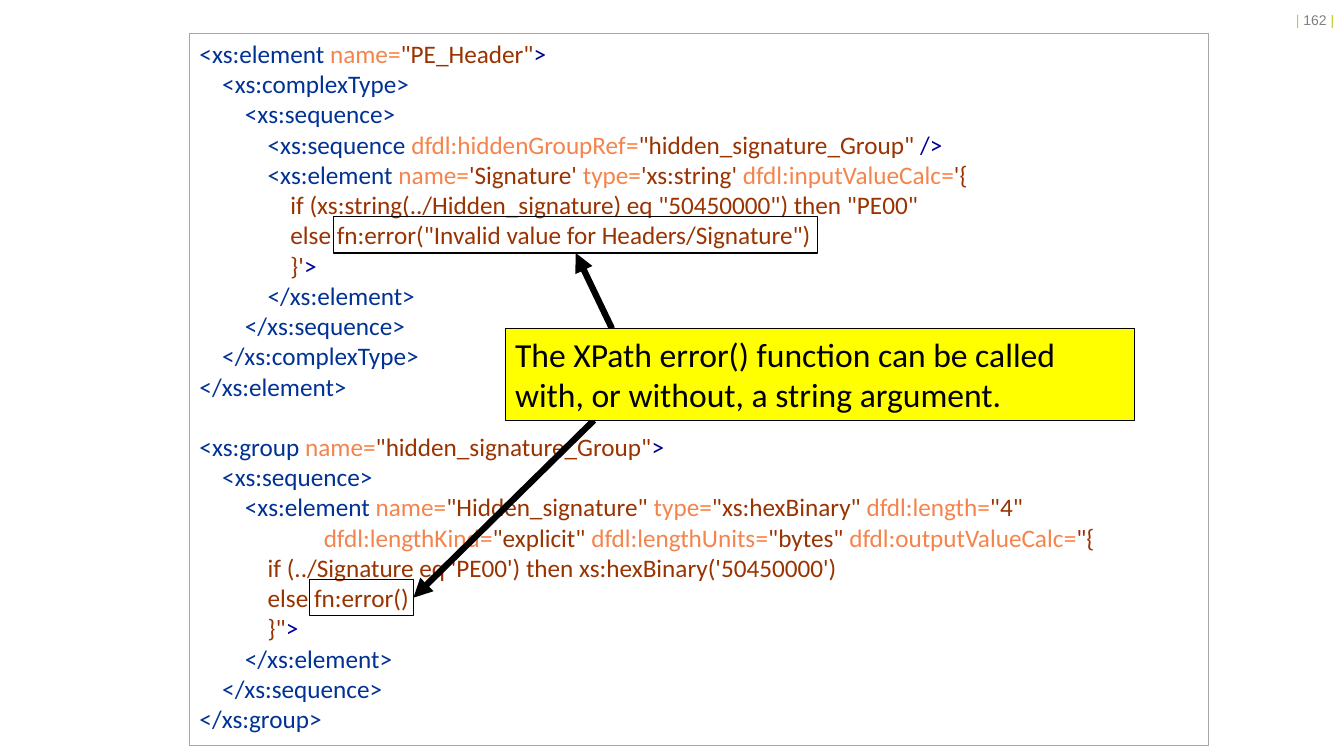
from pptx import Presentation
from pptx.dml.color import RGBColor
from pptx.enum.shapes import MSO_CONNECTOR as CONN, MSO_SHAPE as SHAPE
from pptx.enum.text import PP_ALIGN as ALIGN
from pptx.oxml.ns import qn
from pptx.util import Inches, Pt
from lxml.etree import SubElement

TAG, ATTR, EQUALS, VALUE, CLOSE = "003296", "F5844C", "FF8040", "993300", "000096"
BLACK, GREY, LIME, YELLOW, BORDER = "000000", "808080", "C1CD23", "FFFF00", "A6A6A6"


def rgb(value):
    return RGBColor.from_string(value)


def tag(indent, text):
    return [(TAG, " " * indent + text)]


def attr(name, value):
    return [(ATTR, name), (EQUALS, "="), (VALUE, value)]


def code(indent, text):
    return [(VALUE, " " * indent + text)]


END = [(CLOSE, ">")]

CODE_LINES = [
    tag(0, "<xs:element") + attr(" name", '"PE_Header"') + END,
    tag(4, "<xs:complexType>"),
    tag(8, "<xs:sequence>"),
    tag(12, "<xs:sequence") + attr(" dfdl:hiddenGroupRef", '"hidden_signature_Group"')
    + [(CLOSE, " />")],
    tag(12, "<xs:element") + attr(" name", "'Signature'") + attr(" type", "'xs:string'")
    + attr(" dfdl:inputValueCalc", "'{"),
    code(16, 'if (xs:string(../Hidden_signature) eq "50450000") then "PE00"'),
    code(16, 'else fn:error("Invalid value for Headers/Signature")'),
    code(16, "}'") + END,
    tag(12, "</xs:element>"),
    tag(8, "</xs:sequence>"),
    tag(4, "</xs:complexType>"),
    tag(0, "</xs:element>"),
    [],
    tag(0, "<xs:group") + attr(" name", '"hidden_signature_Group"') + END,
    tag(4, "<xs:sequence>"),
    tag(8, "<xs:element") + attr(" name", '"Hidden_signature"')
    + attr(" type", '"xs:hexBinary"') + attr(" dfdl:length", '"4"'),
    attr(" \t             dfdl:lengthKind", '"explicit"')
    + attr(" dfdl:lengthUnits", '"bytes"') + attr(" dfdl:outputValueCalc", '"{'),
    code(12, "if (../Signature eq 'PE00') then xs:hexBinary('50450000')"),
    code(12, "else fn:error()"),
    code(12, '}"') + END,
    tag(8, "</xs:element>"),
    tag(4, "</xs:sequence>"),
    tag(0, "</xs:group>"),
]


def add_run(p, text, color, size, font):
    r = p.add_run()
    r.text = text
    r.font.size = Pt(size)
    r.font.name = font
    r.font.color.rgb = rgb(color)


def add_text(s, box, line=None, fill=None):
    sp = s.shapes.add_textbox(*map(Inches, box))
    if line:
        sp.line.color.rgb = rgb(line)
        sp.line.width = Pt(0.75)
    if fill:
        sp.fill.solid()
        sp.fill.fore_color.rgb = rgb(fill)
    sp.text_frame.word_wrap = True
    return sp


def add_page_number(s, box):
    p = add_text(s, box).text_frame.paragraphs[0]
    p.alignment = ALIGN.RIGHT
    p.space_after = Pt(6)
    for text, color in (("| ", LIME), ("162 ", GREY), ("|", LIME)):
        add_run(p, text, color, 10, "Arial")


def add_code(s, box):
    p = add_text(s, box, BORDER).text_frame.paragraphs[0]
    for i, runs in enumerate(CODE_LINES):
        if i:
            p.add_line_break()
        for color, text in runs:
            add_run(p, text, color, 18, "Calibri")


def add_frame(s, box):
    sp = s.shapes.add_shape(SHAPE.RECTANGLE, *map(Inches, box))
    sp.shadow.inherit = False
    sp.fill.background()
    sp.line.color.rgb = rgb(BLACK)
    sp.line.width = Pt(1)
    return sp


def add_arrow(s, start, frame, side):
    x, y = map(Inches, start)
    cx = s.shapes.add_connector(CONN.STRAIGHT, x, y, x, y)
    cx.end_connect(frame, side)
    cx.line.color.rgb = rgb(BLACK)
    cx.line.width = Pt(4.5)
    SubElement(cx.line._get_or_add_ln(), qn("a:tailEnd"), type="triangle")
    SubElement(cx._element.spPr, qn("a:effectLst"))


def add_callout(s, box, frames):
    left, top, width, height = box
    string_frame, empty_frame = frames
    add_arrow(s, (left + 1.06, top), string_frame, 2)
    add_arrow(s, (left + 0.88, top + height), empty_frame, 3)
    p = add_text(s, box, BLACK, YELLOW).text_frame.paragraphs[0]
    add_run(p, "The XPath error() function can be called with, or without, "
            "a string argument.", BLACK, 24, "Calibri")


def main():
    prs = Presentation()
    prs.slide_width, prs.slide_height = Inches(13.33), Inches(7.5)
    s = prs.slides.add_slide(prs.slide_layouts[6])
    add_page_number(s, (10.99, 0.07, 2.34, 0.27))
    add_code(s, (1.88, 0.33, 10.11, 7.07))
    frames = [add_frame(s, box) for box in
              ((3.31, 2.15, 4.8, 0.36), (3.07, 5.75, 1.03, 0.36))]
    add_callout(s, (5.01, 3.26, 6.24, 0.91), frames)
    prs.save("out.pptx")


if __name__ == "__main__":
    main()
